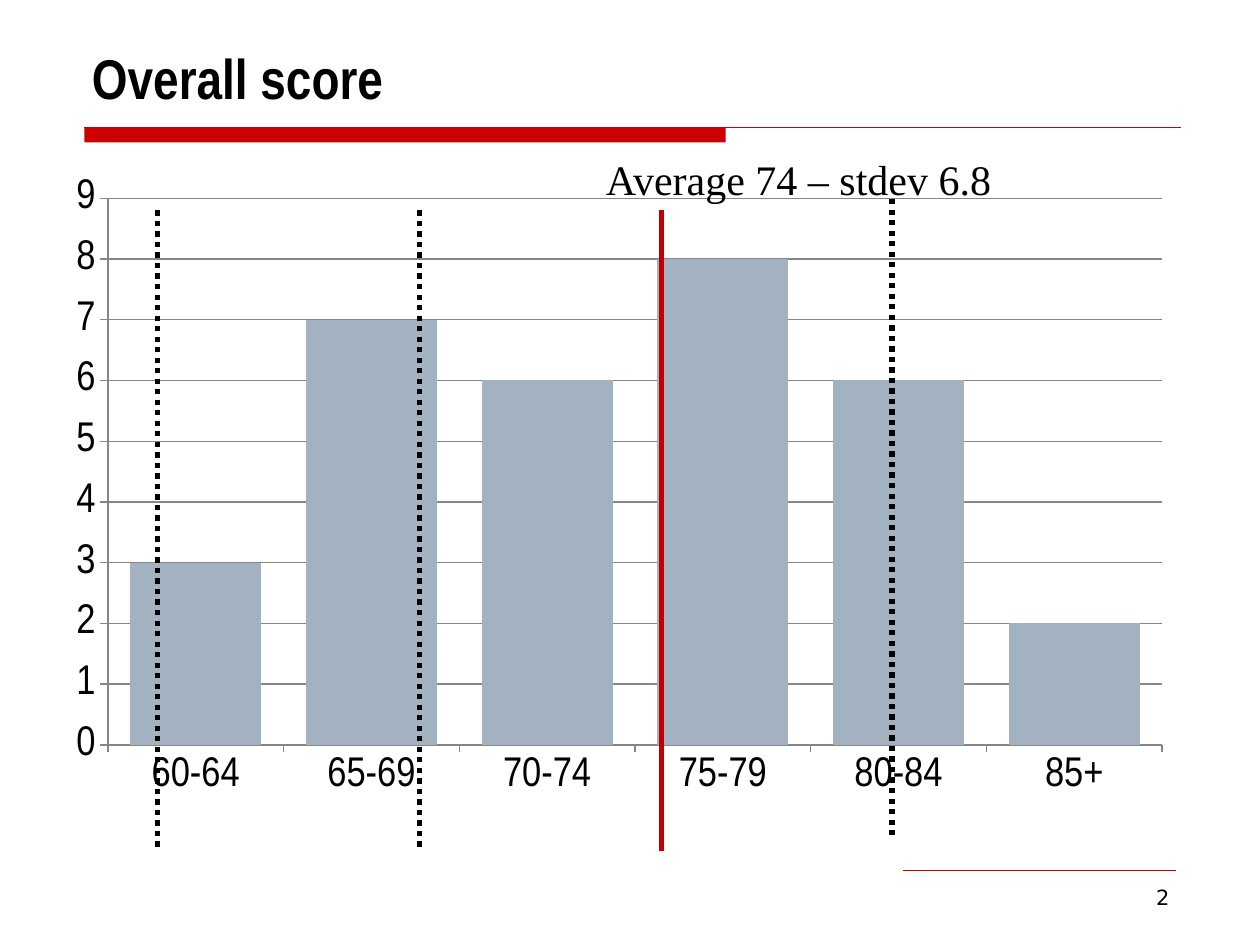
from dataclasses import dataclass

from lxml import etree
from pptx import Presentation
from pptx import util as u
from pptx.chart import data as chart_data
from pptx.dml.color import RGBColor
from pptx.enum import chart as charts, dml, shapes, text
from pptx.oxml import ns


@dataclass(frozen=True)
class Theme:
    ink: RGBColor = RGBColor(0x00, 0x00, 0x00)
    accent: RGBColor = RGBColor(0xCC, 0x00, 0x00)
    average: RGBColor = RGBColor(0xC0, 0x00, 0x00)
    column: RGBColor = RGBColor(0xA3, 0xB2, 0xC1)
    grid: RGBColor = RGBColor(0x86, 0x86, 0x86)
    heading_font: str = "Arial Narrow"
    note_font: str = "Times New Roman"
    number_font: str = "DejaVu Sans"
    title_size: int = 32
    body_size: int = 24
    number_size: int = 12


THEME = Theme()
SCORES = {"60-64": 3, "65-69": 7, "70-74": 6, "75-79": 8, "80-84": 6, "85+": 2}
PLOT_AREA = {"x": 0.031, "y": 0.018, "w": 0.938, "h": 0.894}


def style_font(font, name, size, bold=False):
    font.name = name
    font.size = u.Pt(size)
    font.bold = bold
    font.color.rgb = THEME.ink


def write(shape, words, name, size, align=text.PP_ALIGN.LEFT, bold=False):
    shape.text_frame.text = words
    para = shape.text_frame.paragraphs[0]
    para.alignment = align
    style_font(para.runs[0].font, name, size, bold)


def add_line(page, start, end, color, width, dash=None):
    line = page.shapes.add_connector(
        shapes.MSO_CONNECTOR.STRAIGHT, *map(u.Inches, start + end))
    line.line.color.rgb = color
    line.line.width = u.Pt(width)
    if dash is not None:
        line.line.dash_style = dash
    etree.SubElement(line._element.spPr, ns.qn("a:effectLst"))


def add_header(page, left, top, width, height):
    title = page.shapes.title
    title.left, title.top, title.width, title.height = map(
        u.Inches, (left, top, width, height))
    frame = title.text_frame
    frame.vertical_anchor = text.MSO_ANCHOR.BOTTOM
    frame.auto_size = text.MSO_AUTO_SIZE.NONE
    write(title, "Overall score", THEME.heading_font, THEME.title_size, bold=True)

    rule_left, rule_top = left + 0.04, top + height + 0.08
    bar = page.shapes.add_shape(
        shapes.MSO_SHAPE.RECTANGLE,
        *map(u.Inches, (rule_left, rule_top, 5.09, 0.12)))
    bar.shadow.inherit = False
    bar.fill.solid()
    bar.fill.fore_color.rgb = THEME.accent
    bar.line.fill.background()
    add_line(page, (rule_left, rule_top), (rule_left + 8.7, rule_top),
             THEME.accent, 0.75)


def set_plot_area(chart):
    area = chart._chartSpace.chart.plotArea
    layout = area.find(ns.qn("c:layout"))
    if layout is None:
        layout = etree.Element(ns.qn("c:layout"))
        area.insert(0, layout)
    manual = etree.SubElement(layout, ns.qn("c:manualLayout"))
    settings = {"layoutTarget": "inner", "xMode": "edge", "yMode": "edge"} | PLOT_AREA
    for tag, value in settings.items():
        etree.SubElement(manual, ns.qn("c:" + tag)).set("val", str(value))


def add_score_chart(page, left, top, width, height):
    table = chart_data.CategoryChartData()
    table.categories = list(SCORES)
    table.add_series("Series 1", list(SCORES.values()))
    chart = page.shapes.add_chart(
        charts.XL_CHART_TYPE.COLUMN_CLUSTERED,
        *map(u.Inches, (left, top, width, height)), table).chart
    chart.has_legend = False
    chart.has_title = False
    style_font(chart.font, THEME.heading_font, THEME.body_size)

    plot = chart.plots[0]
    plot.gap_width = 34
    plot.overlap = 65
    plot.vary_by_categories = False
    fill = plot.series[0].format.fill
    fill.solid()
    fill.fore_color.rgb = THEME.column

    counts = chart.value_axis
    counts.minimum_scale, counts.maximum_scale, counts.major_unit = 0, 9, 1
    counts.has_major_gridlines = True
    for part in (counts, chart.category_axis, counts.major_gridlines):
        part.format.line.color.rgb = THEME.grid
        part.format.line.width = u.Pt(0.75)
    for axis in (counts, chart.category_axis):
        axis.major_tick_mark = charts.XL_TICK_MARK.OUTSIDE
        axis.minor_tick_mark = charts.XL_TICK_MARK.NONE
    set_plot_area(chart)


def add_markers(page, top, height):
    dotted = dml.MSO_LINE.ROUND_DOT
    markers = (
        (5.25, top, THEME.average, None),
        (3.33, top, THEME.ink, dotted),
        (1.25, top, THEME.ink, dotted),
        (7.08, top - 0.09, THEME.ink, dotted),
    )
    for x, y, color, dash in markers:
        add_line(page, (x, y), (x, y + height), color, 3, dash)


def add_average_note(page, left, top, width, height):
    box = page.shapes.add_textbox(*map(u.Inches, (left, top, width, height)))
    box.text_frame.word_wrap = False
    box.text_frame.auto_size = text.MSO_AUTO_SIZE.SHAPE_TO_FIT_TEXT
    write(box, "Average 74 – stdev 6.8", THEME.note_font, THEME.body_size)


def add_footer(page, left, top, width, height):
    add_line(page, (left, top), (left + width - 0.05, top), THEME.accent, 0.25)
    box = page.shapes.add_textbox(
        *map(u.Inches, (left, top + 0.06, width, height)))
    box.text_frame.word_wrap = True
    write(box, "2", THEME.number_font, THEME.number_size, text.PP_ALIGN.RIGHT)


def main():
    deck = Presentation()
    deck.slide_width, deck.slide_height = u.Inches(10), u.Inches(7.5)
    page = deck.slides.add_slide(deck.slide_layouts.get_by_name("Title Only"))
    add_header(page, 0.63, 0.16, 8.75, 0.77)
    add_footer(page, 7.17, 6.91, 2.21, 0.38)
    add_score_chart(page, 0.58, 1.42, 8.92, 4.92)
    add_markers(page, 1.67, 5.08)
    add_average_note(page, 4.71, 1.17, 3.29, 0.5)
    deck.save("out.pptx")


if __name__ == "__main__":
    main()
